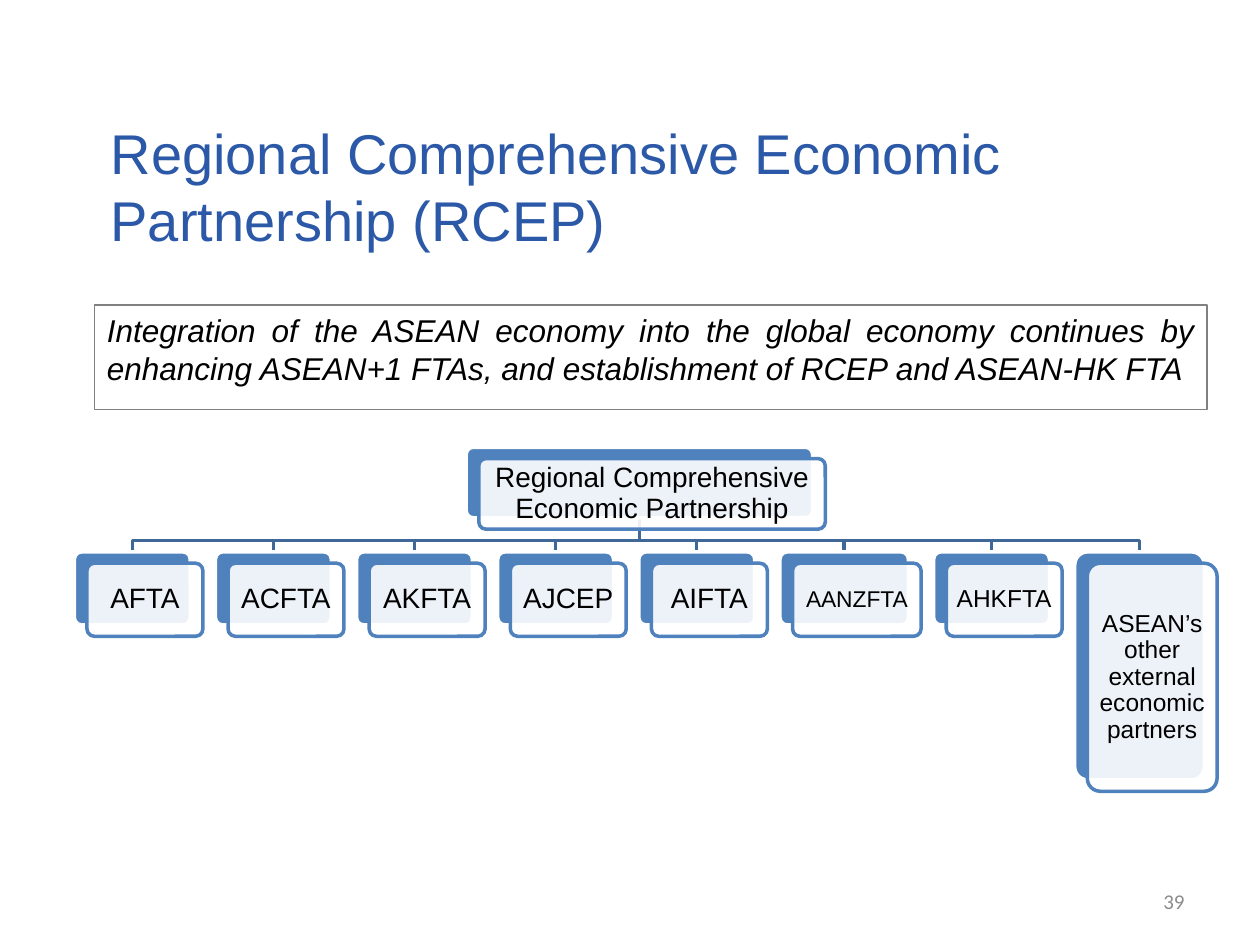
import pptx
import pptx.util
import pptx.dml.color
import pptx.oxml.ns
from lxml import etree
from pptx.enum.shapes import MSO_SHAPE
from pptx.enum.text import MSO_ANCHOR, PP_ALIGN

Inches, Pt = pptx.util.Inches, pptx.util.Pt
BLUE, LINK, WHITE = "4F81BD", "3F6797", "FFFFFF"
GAP = 0.2             # between neighbouring cards
SHIFT = (0.1, 0.09)   # front card relative to its backing
AGREEMENTS = [        # label, width, height, text size, inset
    ("AFTA", 0.92, 0.58, 16, 0.07),
    ("ACFTA", 0.92, 0.58, 16, 0.07),
    ("AKFTA", 0.92, 0.58, 16, 0.07),
    ("AJCEP", 0.92, 0.58, 16, 0.07),
    ("AIFTA", 0.92, 0.58, 16, 0.07),
    ("AANZFTA", 1.02, 0.58, 13, 0.05),
    ("AHKFTA", 0.92, 0.58, 14, 0.06),
    ("ASEAN’s other external economic partners", 1.03, 1.81, 14, 0.06),
]


def rgb(value):
    return pptx.dml.color.RGBColor.from_string(value)


def write(sp, text, size, color="000000", font="Arial", italic=False,
          align=PP_ALIGN.LEFT, anchor=MSO_ANCHOR.MIDDLE, spacing=None,
          inset=(0.1, 0.05)):
    tf = sp.text_frame
    tf.word_wrap = True
    tf.vertical_anchor = anchor
    tf.margin_left = tf.margin_right = Inches(inset[0])
    tf.margin_top = tf.margin_bottom = Inches(inset[1])
    p = tf.paragraphs[0]
    p.alignment = align
    if spacing:
        p.line_spacing = spacing
    r = p.add_run()
    r.text = text
    r.font.size, r.font.name, r.font.italic = Pt(size), font, italic
    r.font.color.rgb = rgb(color)


def add_text(slide, box, text, size, **fmt):
    sp = slide.shapes.add_textbox(*map(Inches, box))
    write(sp, text, size, **fmt)
    return sp


def add_round_box(slide, box, fill, line, opacity=100):
    sp = slide.shapes.add_shape(MSO_SHAPE.ROUNDED_RECTANGLE, *map(Inches, box))
    sp.adjustments[0] = 0.1
    sp.shadow.inherit = False
    sp.fill.solid()
    sp.fill.fore_color.rgb = rgb(fill)
    sp.line.color.rgb = rgb(line)
    sp.line.width = Pt(2)
    if opacity < 100:
        qn = pptx.oxml.ns.qn
        clr = sp.fill._xPr.find(qn("a:solidFill")).find(qn("a:srgbClr"))
        etree.SubElement(clr, qn("a:alpha"), val=str(opacity * 1000))
    return sp


def add_card(slide, box, text, size, inset):
    """Draw a solid backing with a translucent labelled card over it."""
    x, y, w, h = box
    add_round_box(slide, box, BLUE, WHITE)
    front = add_round_box(slide, (x + SHIFT[0], y + SHIFT[1], w, h),
                          WHITE, BLUE, opacity=90)
    write(front, text, size, align=PP_ALIGN.CENTER, spacing=0.9,
          inset=(inset, inset))


def add_link(slide, start, end):
    """Draw an elbow line that turns 0.09 in above its end."""
    (x1, y1), (x2, y2) = start, end
    bend = y2 - 0.09
    points = [(x1, y1), (x1, bend), (x2, bend), (x2, y2)]
    points = [(Inches(x), Inches(y)) for x, y in points]
    fb = slide.shapes.build_freeform(*points[0])
    fb.add_line_segments(points[1:], close=False)
    sp = fb.convert_to_shape()
    sp.shadow.inherit = False
    sp.fill.background()
    sp.line.color.rgb = rgb(LINK)
    sp.line.width = Pt(2)


def add_tree(slide, left, top):
    """Draw the partnership above a row of its agreements."""
    root = (left + 3.11, top, 2.75, 0.56)
    row = top + 0.83
    foot = (root[0] + root[2] / 2, root[1] + root[3])
    cards, x = [], left
    for label, w, h, size, inset in AGREEMENTS:
        cards.append(((x, row, w, h), label, size, inset))
        x += w + GAP
    for box, *_ in reversed(cards):
        add_link(slide, foot, (box[0] + box[2] / 2, row))
    add_card(slide, root, "Regional Comprehensive Economic Partnership", 16, 0.07)
    for card in cards:
        add_card(slide, *card)


def add_statement(slide, box):
    sp = add_text(
        slide, box,
        "Integration of the ASEAN economy into the global economy continues by "
        "enhancing ASEAN+1 FTAs, and establishment of RCEP and ASEAN-HK FTA",
        18, italic=True, align=PP_ALIGN.JUSTIFY, anchor=MSO_ANCHOR.TOP)
    sp.line.color.rgb = rgb("808080")
    sp.line.width = Pt(0.75)


def main():
    prs = pptx.Presentation()
    prs.slide_width, prs.slide_height = Inches(10), Inches(7.5)
    slide = prs.slides.add_slide(prs.slide_layouts[6])
    add_statement(slide, (0.75, 2.42, 8.83, 0.83))
    add_text(slide, (0.78, 1.09, 7.81, 0.77),
             "Regional Comprehensive Economic Partnership (RCEP)", 32,
             color="2C59A7")
    add_tree(slide, 0.59, 3.55)
    add_text(slide, (7.17, 6.95, 2.33, 0.4), "39", 12, color="8C8C8C",
             font="Calibri", align=PP_ALIGN.RIGHT)
    prs.save("out.pptx")


if __name__ == "__main__":
    main()
